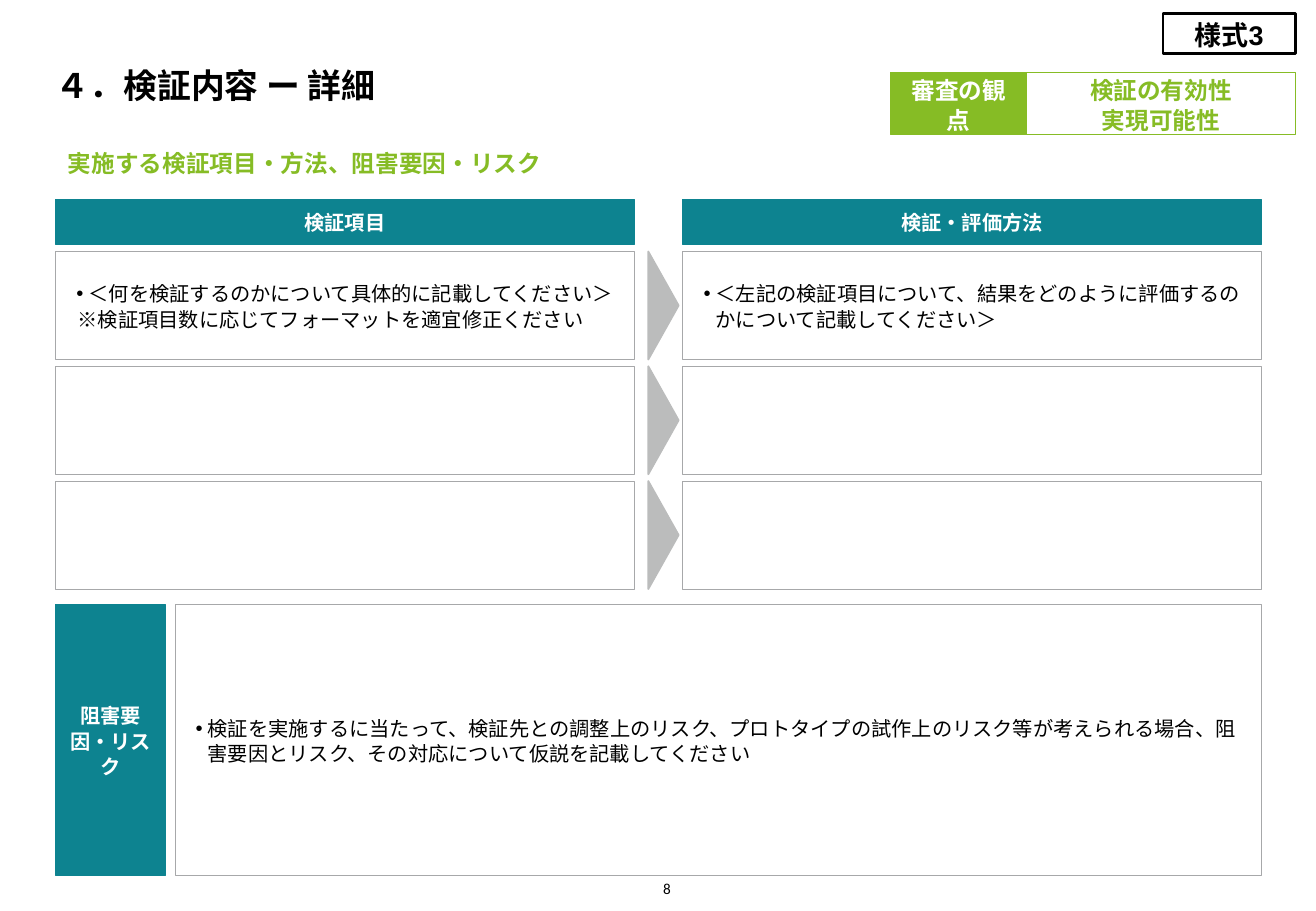
import pptx
import pptx.dml.color
import pptx.enum.shapes
import pptx.enum.text
import pptx.oxml
import pptx.oxml.ns
import pptx.util

Inches = pptx.util.Inches
Pt = pptx.util.Pt
ALIGN = pptx.enum.text.PP_ALIGN
ANCHOR = pptx.enum.text.MSO_ANCHOR
SHAPES = pptx.enum.shapes.MSO_SHAPE

COLORS = {
    "black": "000000",
    "white": "FFFFFF",
    "green": "86BC25",
    "teal": "0D8390",
    "border": "A7A8AA",
    "arrow": "BBBCBC",
}
LEFT, COLUMN_WIDTH, COLUMN_STEP = 0.46, 4.76, 5.16
ROW_TOP, ROW_HEIGHT, ROW_STEP = 2.07, 0.89, 0.945
ROWS = [
    (
        [("＜何を検証するのかについて具体的に記載してください＞", True),
         ("※検証項目数に応じてフォーマットを適宜修正ください", False)],
        [("＜左記の検証項目について、結果をどのように評価するのかについて記載してください＞", True)],
    ),
    ([], []),
    ([], []),
]


def rgb(name):
    return pptx.dml.color.RGBColor.from_string(COLORS[name])


def set_frame(shape, inset_x, inset_y, anchor, wrap=True):
    frame = shape.text_frame
    frame.margin_left = frame.margin_right = Inches(inset_x)
    frame.margin_top = frame.margin_bottom = Inches(inset_y)
    frame.vertical_anchor = anchor
    frame.word_wrap = wrap
    return frame


def add_run(paragraph, text, size, color, bold=False, font="Arial"):
    run = paragraph.add_run()
    run.text = text
    run.font.name = font
    run.font.size = Pt(size)
    run.font.bold = bold
    run.font.color.rgb = rgb(color)


def add_paragraph(frame, index):
    paragraph = frame.paragraphs[0] if index == 0 else frame.add_paragraph()
    paragraph.line_spacing = 1.06
    return paragraph


def add_box(slide, box, fill, line, line_width=0.5, kind=SHAPES.RECTANGLE):
    shape = slide.shapes.add_shape(kind, *map(Inches, box))
    shape.shadow.inherit = False
    shape.fill.solid()
    shape.fill.fore_color.rgb = rgb(fill)
    shape.line.color.rgb = rgb(line)
    shape.line.width = Pt(line_width)
    return shape


def add_label(slide, box, lines, size, color, fill, line, line_width=0.5):
    shape = add_box(slide, box, fill, line, line_width)
    frame = set_frame(shape, 0.08, 0.08, ANCHOR.MIDDLE)
    for index, text in enumerate(lines):
        paragraph = add_paragraph(frame, index)
        paragraph.alignment = ALIGN.CENTER
        add_run(paragraph, text, size, color, bold=True)


def add_body(slide, box, lines):
    shape = add_box(slide, box, "white", "border")
    frame = set_frame(shape, 0.08, 0.08, ANCHOR.MIDDLE)
    for index, (text, bulleted) in enumerate(lines):
        paragraph = add_paragraph(frame, index)
        paragraph.alignment = ALIGN.LEFT
        properties = paragraph._p.get_or_add_pPr()
        properties.set("marL", str(Inches(0.19 if bulleted else 0.1)))
        properties.set("indent", str(Inches(-0.1 if bulleted else 0)))
        if bulleted:
            bullet_font = pptx.oxml.parse_xml(
                f'<a:buFont {pptx.oxml.ns.nsdecls("a")} typeface="Arial"/>')
            bullet = pptx.oxml.parse_xml(
                f'<a:buChar {pptx.oxml.ns.nsdecls("a")} char="•"/>')
            properties.extend([bullet_font, bullet])
        add_run(paragraph, text, 12, "black", font="Arial" if bulleted else "Calibri")


def add_text(slide, box, text, size, color, bold, anchor, inset=(0, 0),
             align=ALIGN.LEFT, wrap=True):
    shape = slide.shapes.add_textbox(*map(Inches, box))
    frame = set_frame(shape, *inset, anchor, wrap)
    paragraph = frame.paragraphs[0]
    paragraph.alignment = align
    add_run(paragraph, text, size, color, bold, "Calibri")


def add_heading(slide, left, top, width):
    add_text(slide, (left, top, width, 0.67), "４．検証内容 ー 詳細", 20, "black", True,
             ANCHOR.BOTTOM)
    add_text(slide, (left, top + 0.91, COLUMN_WIDTH, 0.47),
             "実施する検証項目・方法、阻害要因・リスク", 14, "green", True,
             ANCHOR.MIDDLE, (0.1, 0.05), wrap=False)


def add_review_panel(slide, left, top, width, height):
    label_width = 1.12
    add_label(slide, (left + label_width, top, width - label_width, height),
              ["検証の有効性", "実現可能性"], 14, "green", "white", "green")
    add_label(slide, (left, top, label_width, height),
              ["審査の観点"], 14, "white", "green", "green")


def add_arrow(slide, center_x, center_y, length, thickness):
    box = (center_x - length / 2, center_y - thickness / 2, length, thickness)
    arrow = add_box(slide, box, "arrow", "arrow", 1, SHAPES.ISOSCELES_TRIANGLE)
    arrow.rotation = 90


def add_verification_grid(slide, left, top):
    for column, title in enumerate(["検証項目", "検証・評価方法"]):
        add_label(slide, (left + column * COLUMN_STEP, top - 0.43, COLUMN_WIDTH, 0.37),
                  [title], 12, "white", "teal", "teal")
    for row, cells in enumerate(ROWS):
        row_top = top + row * ROW_STEP
        for column, lines in enumerate(cells):
            add_body(slide, (left + column * COLUMN_STEP, row_top, COLUMN_WIDTH, ROW_HEIGHT),
                     lines)
        add_arrow(slide, left + 5, row_top + ROW_HEIGHT / 2, ROW_HEIGHT, 0.25)


def add_risk_panel(slide, left, top, width, height):
    body_offset = 0.98
    add_body(slide, (left + body_offset, top, width - body_offset, height),
             [("検証を実施するに当たって、検証先との調整上のリスク、プロトタイプの試作上のリスク等が考えられる場合、阻害要因とリスク、その対応について仮説を記載してください", True)])
    add_label(slide, (left, top, 0.9, height), ["阻害要因・リスク"], 12,
              "white", "teal", "teal")


def main():
    presentation = pptx.Presentation()
    presentation.slide_width = Inches(10.83)
    presentation.slide_height = Inches(7.5)
    slide = presentation.slides.add_slide(presentation.slide_layouts[6])
    content_width = COLUMN_STEP + COLUMN_WIDTH
    add_text(slide, (5.32, 7.2, 0.2, 0.19), "8", 9, "black", False, ANCHOR.BOTTOM,
             align=ALIGN.RIGHT)
    add_label(slide, (9.57, 0.11, 1.09, 0.33), ["様式3"], 16, "black", "white", "black", 1.5)
    add_heading(slide, LEFT, 0.2, content_width)
    add_review_panel(slide, 7.33, 0.6, 3.33, 0.51)
    add_verification_grid(slide, LEFT, ROW_TOP)
    add_risk_panel(slide, LEFT, 4.98, content_width, 2.23)
    presentation.save("out.pptx")


if __name__ == "__main__":
    main()
